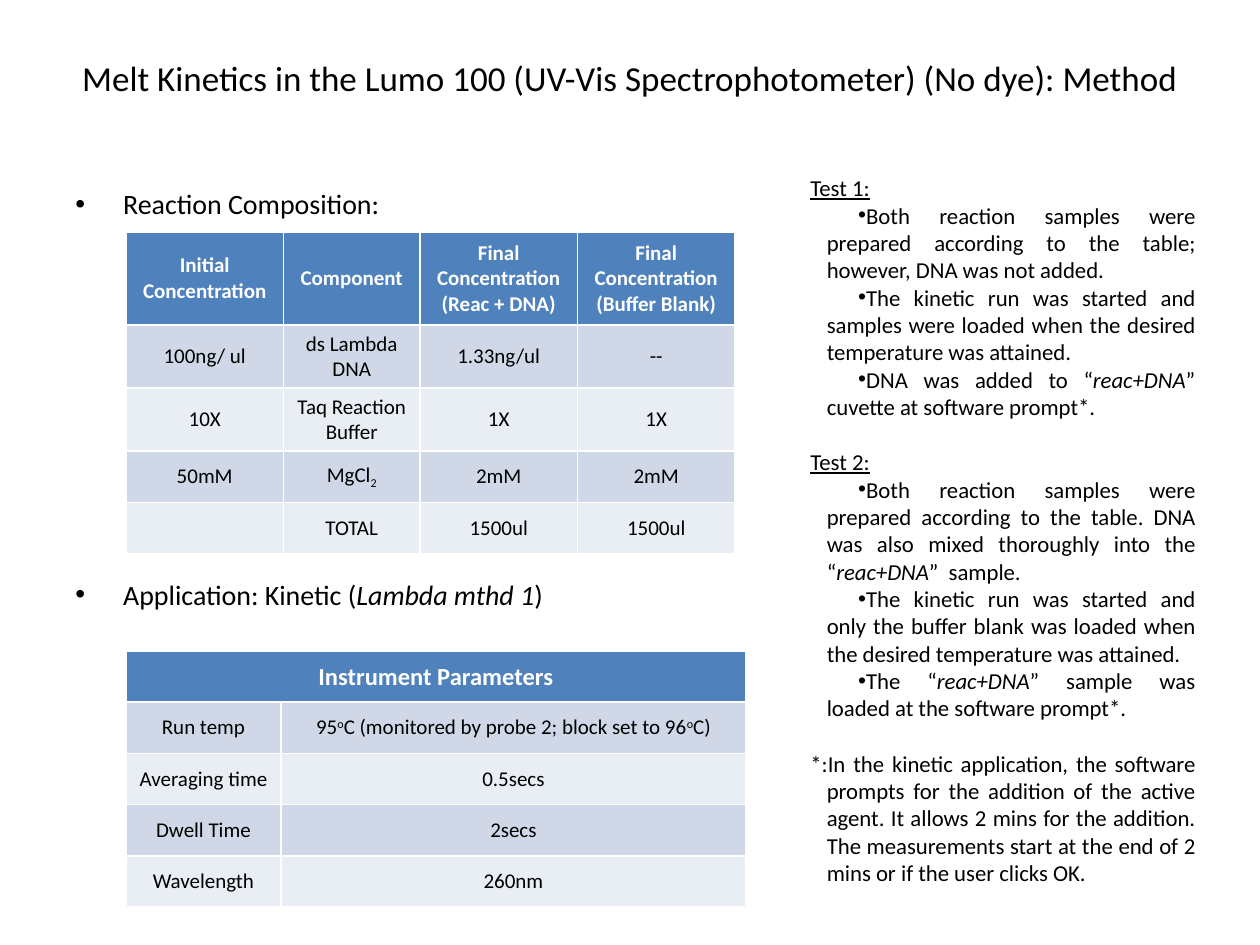
from lxml import etree
from pptx import Presentation
from pptx.dml.color import RGBColor
from pptx.enum.text import MSO_ANCHOR, MSO_AUTO_SIZE, PP_ALIGN
from pptx.oxml.ns import qn
from pptx.util import Emu, Inches, Pt

CENTER, JUSTIFY = PP_ALIGN.CENTER, PP_ALIGN.JUSTIFY
MIDDLE = MSO_ANCHOR.MIDDLE
GROW = MSO_AUTO_SIZE.SHAPE_TO_FIT_TEXT
TITLE_ONLY = 5
BLACK, WHITE, HEADER = "000000", "FFFFFF", "4F81BD"
BANDS = ("D0D8E8", "E9EDF4")
ITALIC, UNDERLINE = {"italic": True}, {"underline": True}
SUBSCRIPT, SUPERSCRIPT = {"baseline": -25000}, {"baseline": 30000}

presentation = Presentation()
presentation.slide_width, presentation.slide_height = Inches(10), Inches(7.5)
slide = presentation.slides.add_slide(presentation.slide_layouts[TITLE_ONLY])


def grid(*counts):
    """Lengths on a grid of 60 columns by 45 rows of square cells."""
    return [Emu(round(count * presentation.slide_width / 60)) for count in counts]


def write(paragraph, runs, size, align=None, color=BLACK, bold=False,
          indent=None, bullet=False, before=0):
    """Fill a paragraph with runs, each a string or a (string, formats) pair."""
    paragraph.alignment = align
    paragraph.space_before = Pt(before)
    properties = paragraph._p.get_or_add_pPr()
    if indent:
        for name, inches in zip(("marL", "indent"), indent):
            properties.set(name, str(Inches(inches)))
    if bullet:
        etree.SubElement(properties, qn("a:buFont")).set("typeface", "Arial")
        etree.SubElement(properties, qn("a:buChar")).set("char", "•")
    for item in [runs] if isinstance(runs, str) else runs:
        text, formats = (item, {}) if isinstance(item, str) else item
        run = paragraph.add_run()
        run.text = text
        run.font.color.rgb = RGBColor.from_string(color)
        values = {"name": "Calibri", "size": Pt(size), "bold": bold, **formats}
        for name, value in values.items():
            if name == "baseline":
                run._r.get_or_add_rPr().set(name, str(value))
            else:
                setattr(run.font, name, value)


# Title
title = slide.shapes.title
title.left, title.top, title.width, title.height = grid(3, 0, 54, 7.4)
title.text_frame.vertical_anchor = MIDDLE
write(title.text_frame.paragraphs[0],
      "Melt Kinetics in the Lumo 100 (UV-Vis Spectrophotometer) (No dye): Method",
      20, CENTER)

# Headings of the two tables, and the test notes on the right
headings = [
    ("Reaction Composition:", {}),
    (["Application: Kinetic (", ("Lambda mthd 1", ITALIC), ")"], {"before": 204}),
]
for _, options in headings:
    options.update(indent=(0.38, -0.38), bullet=True)

point = {"indent": (0.13, 0.25), "bullet": True}
hanging = {"indent": (0.13, -0.13), "before": 16}
sample = ("reac+DNA", ITALIC)
notes = [
    ([("Test 1:", UNDERLINE)], {}),
    ("Both reaction samples were prepared according to the table; however, "
     "DNA was not added.", point),
    ("The kinetic run was started and samples were loaded when the desired "
     "temperature was attained.", point),
    (["DNA was added to “", sample, "” cuvette at software prompt*."], point),
    ([("Test 2:", UNDERLINE)], hanging),
    (["Both reaction samples were prepared according to the table. DNA was also "
      "mixed thoroughly into the “", sample, "”  sample."], point),
    ("The kinetic run was started and only the buffer blank was loaded when the "
     "desired temperature was attained.", point),
    (["The “", sample, "” sample was loaded at the software prompt*."], point),
    ("*:In the kinetic application, the software prompts for the addition of the "
     "active agent. It allows 2 mins for the addition. The measurements start at "
     "the end of 2 mins or if the user clicks OK.", hanging),
]

text_boxes = [
    ((3, 8.6, 54, 29.7), headings, 16, None, None),
    ((38, 8, 19.5, 36), notes, 13, JUSTIFY, GROW),
]
for place, entries, size, align, fit in text_boxes:
    frame = slide.shapes.add_textbox(*grid(*place)).text_frame
    frame.word_wrap = True
    if fit is not None:
        frame.auto_size = fit
    for index, (runs, options) in enumerate(entries):
        paragraph = frame.add_paragraph() if index else frame.paragraphs[0]
        write(paragraph, runs, size, align, **options)

# Tables: a header row, then banded rows
composition = [
    ["Initial Concentration", "Component", "Final Concentration\n(Reac + DNA)",
     "Final Concentration\n(Buffer Blank)"],
    ["100ng/ ul", "ds Lambda DNA", "1.33ng/ul", "--"],
    ["10X", "Taq Reaction Buffer", "1X", "1X"],
    ["50mM", ["MgCl", ("2", SUBSCRIPT)], "2mM", "2mM"],
    ["", "TOTAL", "1500ul", "1500ul"],
]
degree = ("o", SUPERSCRIPT)
parameters = [
    ["Instrument Parameters", ""],
    ["Run temp", ["95", degree, "C (monitored by probe 2; block set to 96",
                  degree, "C)"]],
    ["Averaging time", "0.5secs"],
    ["Dwell Time", "2secs"],
    ["Wavelength", "260nm"],
]
tables = [
    (composition, 11.04, (7.5, 6.5, 7.5, 7.5), 4.44, 12),
    (parameters, 31, (7.38, 22.14), 2.44, 14),
]
for rows, top, widths, header_height, header_size in tables:
    heights = [header_height] + [2.44] * (len(rows) - 1)
    place = grid(6, top, sum(widths), sum(heights))
    table = slide.shapes.add_table(len(rows), len(widths), *place).table
    for column, width in zip(table.columns, grid(*widths)):
        column.width = width
    for row, height in zip(table.rows, grid(*heights)):
        row.height = height
    if not rows[0][-1]:
        table.cell(0, 0).merge(table.cell(0, len(widths) - 1))
    for row_index, row in enumerate(rows):
        is_header = row_index == 0
        fill = HEADER if is_header else BANDS[(row_index - 1) % 2]
        for column_index, content in enumerate(row):
            cell = table.cell(row_index, column_index)
            cell.vertical_anchor = MIDDLE
            cell.fill.solid()
            cell.fill.fore_color.rgb = RGBColor.from_string(fill)
            if not content:
                continue
            lines = content.split("\n") if isinstance(content, str) else [content]
            for index, line in enumerate(lines):
                frame = cell.text_frame
                paragraph = frame.add_paragraph() if index else frame.paragraphs[0]
                write(paragraph, line, header_size if is_header else 12, CENTER,
                      WHITE if is_header else BLACK, is_header)

presentation.save("out.pptx")
